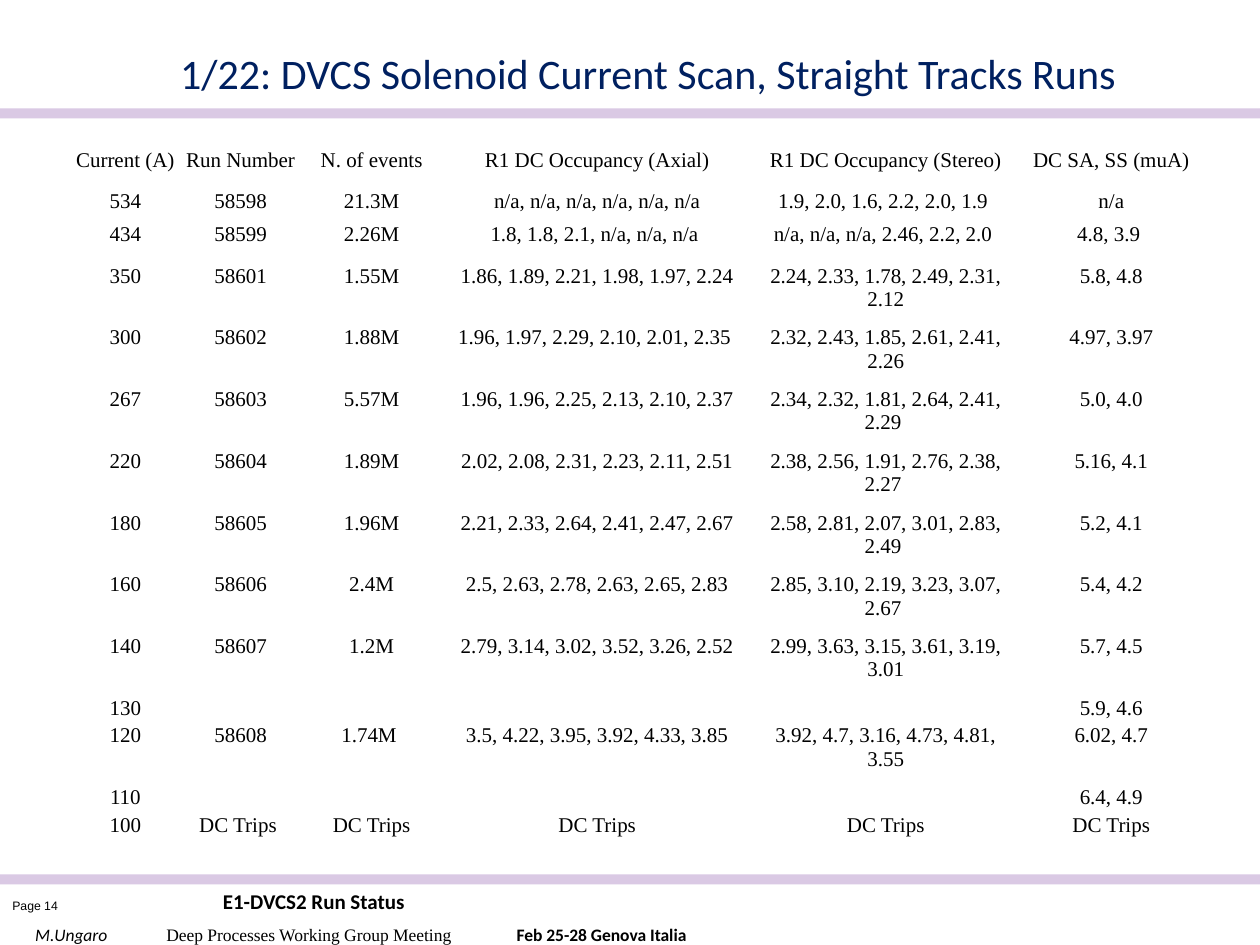
from dataclasses import dataclass

from lxml.etree import SubElement
from pptx import Presentation
from pptx.dml.color import RGBColor as RGB
from pptx.enum.shapes import MSO_SHAPE as Shape
from pptx.enum.text import MSO_ANCHOR as Anchor, MSO_AUTO_SIZE as Fit, PP_ALIGN as Align
from pptx.oxml.ns import qn
from pptx.util import Inches, Pt


@dataclass
class Theme:
    ink: str = "000000"
    navy: str = "002060"
    lilac: str = "DAC9E4"
    white: str = "FFFFFF"
    sans: str = "Calibri"
    serif: str = "Times New Roman"
    plain: str = "Arial"
    head: int = 24
    body: int = 12
    foot: int = 10
    page: int = 7


def write(para, text, font, size, color, bold=False, italic=False):
    """Add one formatted run to a paragraph."""
    run = para.add_run()
    run.text = text
    face = run.font
    face.name, face.size, face.bold, face.italic = font, Pt(size), bold, italic
    face.color.rgb = RGB.from_string(color)


def place(shape, box):
    shape.left, shape.top, shape.width, shape.height = map(Inches, box)


class Deck:
    def __init__(self, theme):
        self.theme = theme
        self.prs = Presentation()
        self.prs.slide_width, self.prs.slide_height = Inches(10), Inches(7.5)
        self.slide = self.prs.slides.add_slide(self.prs.slide_layouts[5])

    def title(self, text, box):
        shape = self.slide.shapes.title
        place(shape, box)
        frame = shape.text_frame
        frame.word_wrap, frame.auto_size = False, Fit.NONE
        frame.vertical_anchor = Anchor.TOP
        para = frame.paragraphs[0]
        para.alignment = Align.LEFT
        write(para, text, self.theme.sans, self.theme.head, self.theme.navy)

    def bar(self, box, color):
        shape = self.slide.shapes.add_shape(Shape.RECTANGLE, *map(Inches, box))
        shape.shadow.inherit = False
        shape.fill.solid()
        shape.fill.fore_color.rgb = RGB.from_string(color)
        shape.line.fill.background()
        return shape

    def label(self, text, box, font, size, wrap=True, bold=False):
        frame = self.slide.shapes.add_textbox(*map(Inches, box)).text_frame
        frame.word_wrap = wrap
        write(frame.paragraphs[0], text, font, size, self.theme.ink, bold=bold)

    def footer(self, parts, box, stops):
        """White strip with runs set apart by tab stops."""
        frame = self.bar(box, self.theme.white).text_frame
        frame.word_wrap, frame.vertical_anchor = True, Anchor.TOP
        frame.margin_left = Inches(0.03)
        frame.margin_right = frame.margin_top = frame.margin_bottom = 0
        para = frame.paragraphs[0]
        para.alignment = Align.LEFT
        tabs = SubElement(para._p.get_or_add_pPr(), qn("a:tabLst"))
        for stop in stops:
            SubElement(tabs, qn("a:tab"), pos=str(Inches(stop)), algn="l")
        for text, style in parts:
            write(para, text, size=self.theme.foot, color=self.theme.ink, **style)

    def table(self, data, box, cols, rows):
        table = self.slide.shapes.add_table(
            len(rows), len(cols), *map(Inches, box)).table
        table.first_row = table.horz_banding = False
        for col, width in zip(table.columns, cols):
            col.width = Inches(width)
        for row, height, line in zip(table.rows, rows, data):
            row.height = Inches(height)
            for cell, text in zip(row.cells, line):
                self.cell(cell, text)

    def cell(self, cell, text):
        cell.fill.background()
        cell.margin_left = cell.margin_right = Inches(0.02)
        cell.margin_top = cell.margin_bottom = Inches(0.01)
        para = cell.text_frame.paragraphs[0]
        para.alignment = Align.CENTER
        if text:
            write(para, text, self.theme.serif, self.theme.body, self.theme.ink)
        else:  # keep empty cells from stretching the row
            SubElement(para._p, qn("a:endParaRPr"), sz=str(self.theme.body * 100))


SCAN = [
    ("Current (A)", "Run Number", "N. of events", "R1 DC Occupancy (Axial)",
     "R1 DC Occupancy (Stereo)", "DC SA, SS (muA)"),
    ("534", "58598", "21.3M", "n/a, n/a, n/a, n/a, n/a, n/a",
     "1.9, 2.0, 1.6, 2.2, 2.0, 1.9 ", "n/a"),
    ("434", "58599", "2.26M", "1.8, 1.8, 2.1, n/a, n/a, n/a ",
     "n/a, n/a, n/a, 2.46, 2.2, 2.0 ", "4.8, 3.9 "),
    ("350", "58601", "1.55M", "1.86, 1.89, 2.21, 1.98, 1.97, 2.24",
     "2.24, 2.33, 1.78, 2.49, 2.31, 2.12", "5.8, 4.8"),
    ("300", "58602", "1.88M", "1.96, 1.97, 2.29, 2.10, 2.01, 2.35 ",
     "2.32, 2.43, 1.85, 2.61, 2.41, 2.26", "4.97, 3.97"),
    ("267", "58603", "5.57M", "1.96, 1.96, 2.25, 2.13, 2.10, 2.37",
     "2.34, 2.32, 1.81, 2.64, 2.41, 2.29 ", "5.0, 4.0"),
    ("220", "58604", "1.89M", "2.02, 2.08, 2.31, 2.23, 2.11, 2.51",
     "2.38, 2.56, 1.91, 2.76, 2.38, 2.27 ", "5.16, 4.1"),
    ("180", "58605", "1.96M", "2.21, 2.33, 2.64, 2.41, 2.47, 2.67",
     "2.58, 2.81, 2.07, 3.01, 2.83, 2.49 ", "5.2, 4.1"),
    ("160", "58606", "2.4M", "2.5, 2.63, 2.78, 2.63, 2.65, 2.83",
     "2.85, 3.10, 2.19, 3.23, 3.07, 2.67 ", "5.4, 4.2"),
    ("140", "58607", "1.2M", "2.79, 3.14, 3.02, 3.52, 3.26, 2.52",
     "2.99, 3.63, 3.15, 3.61, 3.19, 3.01", "5.7, 4.5"),
    ("130", "", "", "", "", "5.9, 4.6"),
    ("120", "58608", "1.74M ", "3.5, 4.22, 3.95, 3.92, 4.33, 3.85",
     "3.92, 4.7, 3.16, 4.73, 4.81, 3.55", "6.02, 4.7"),
    ("110", "", "", "", "", "6.4, 4.9"),
    ("100", "DC Trips ") + ("DC Trips",) * 4,
]
COLS = [0.83, 1, 1.08, 2.5, 2.08, 1.5]
TALL, LOW = 0.49, 0.22
ROWS = [0.33, 0.26, 0.33] + [TALL] * 7 + [LOW, TALL, LOW, LOW]


def main():
    theme = Theme()
    deck = Deck(theme)

    # Footer and rules
    deck.label("Page 14", (0, 7.08, 0.58, 0.22), theme.plain, theme.page, wrap=False)
    deck.footer([
        ("M.Ungaro", dict(font=theme.sans, italic=True)),
        ("\tDeep Processes Working Group Meeting", dict(font=theme.serif)),
        ("\tFeb 25-28 Genova Italia", dict(font=theme.sans, bold=True)),
    ], (0.25, 7.33, 5.83, 0.17), stops=(1.04, 3.82))
    for top in (6.94, 0.86):
        deck.bar((0, top, 10, 0.08), theme.lilac)
    deck.label("E1-DVCS2 Run Status", (1.67, 7, 3.08, 0.3), theme.sans,
               theme.body, bold=True)

    # Scan results
    deck.table(SCAN, (0.58, 1.17, 9, 5.5), COLS, ROWS)

    # Title
    deck.title("1/22: DVCS Solenoid Current Scan, Straight Tracks Runs",
               (1.33, 0.33, 7.77, 0.5))
    deck.prs.save("out.pptx")


if __name__ == "__main__":
    main()
